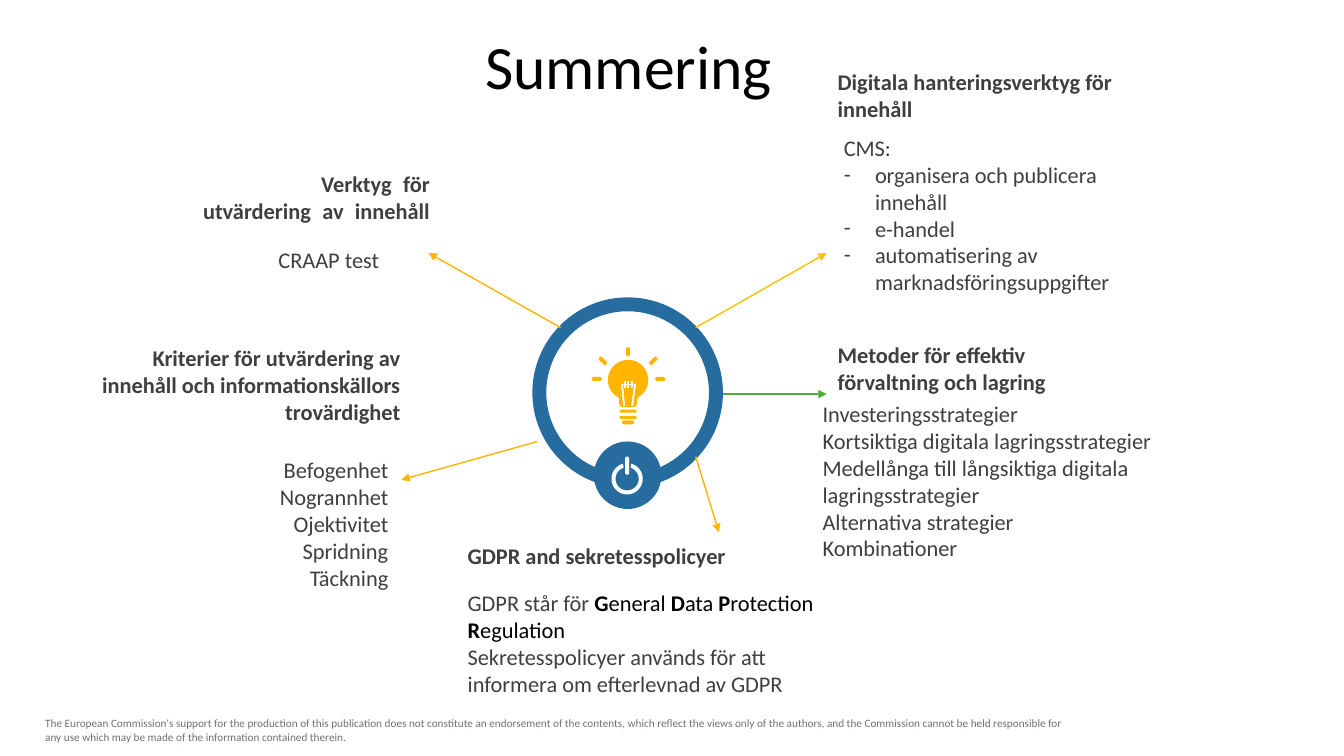
from math import cos, radians, sin

from pptx import Presentation
from pptx.dml.color import RGBColor
from pptx.enum.shapes import MSO_CONNECTOR, MSO_SHAPE
from pptx.enum.text import MSO_ANCHOR, PP_ALIGN
from pptx.oxml.ns import qn
from pptx.util import Inches, Pt
from lxml import etree

LEFT, RIGHT, MID = PP_ALIGN.LEFT, PP_ALIGN.RIGHT, PP_ALIGN.CENTER
OVAL, DONUT = MSO_SHAPE.OVAL, MSO_SHAPE.DONUT
COLORS = {"ring": "266C9F", "bulb": "FFB500", "gold": "FFC000", "green": "4EAE3A",
          "text": "3F3F3F", "black": "000000", "white": "FFFFFF", "note": "757070"}

prs = Presentation()
prs.slide_width, prs.slide_height = Inches(13.33), Inches(7.5)
slide = prs.slides.add_slide(prs.slide_layouts[5])


def rgb(name):
    return RGBColor.from_string(COLORS[name])


def write(box, paras, size=16, align=LEFT, color="text", anchor=MSO_ANCHOR.MIDDLE):
    """Fill a box with paragraphs; each is a list of (text, bold, color) runs,
    and a first item of "-" makes it a dashed list item."""
    frame = box.text_frame
    frame.word_wrap, frame.vertical_anchor = True, anchor
    for i, runs in enumerate(paras):
        para = frame.paragraphs[0] if i == 0 else frame.add_paragraph()
        if runs[0] == "-":
            runs = runs[1:]
            ppr = para._p.get_or_add_pPr()
            ppr.set("marL", str(Inches(0.31)))
            ppr.set("indent", str(-Inches(0.31)))
            etree.SubElement(ppr, qn("a:buFont")).set("typeface", "Calibri")
            etree.SubElement(ppr, qn("a:buChar")).set("char", "-")
        para.alignment = align
        for text, bold, *tint in runs:
            if text == "\n":
                para.add_line_break()
                continue
            run = para.add_run()
            run.text = text
            font = run.font
            font.name, font.size, font.bold = "Calibri", Pt(size), bold
            font.color.rgb = rgb(tint[0] if tint else color)
            if text == " ":
                run._r.get_or_add_rPr().set("spc", "450")


# Title and footer
title = slide.shapes.title
title.left, title.top = Inches(2.87), Inches(0.29)
title.width, title.height = Inches(6.73), Inches(0.79)
write(title, [[("Summering", False)]], 44, MID, "black")
title.text_frame.paragraphs[0].line_spacing = 0.9

foot = slide.shapes.add_textbox(Inches(0.35), Inches(7.06), Inches(10.46), Inches(0.37))
write(foot, [[("The European Commission's support for the production of this publication "
               "does not constitute an endorsement of the contents, which reflect the views "
               "only of the authors, and the Commission cannot be held responsible for any "
               "use which may be made of the information contained therein.", False)]],
      8, color="note", anchor=MSO_ANCHOR.TOP)

# Outlines of the bulb (glass, then filament) and of the power sign
glass = [(6.23 + 0.2 * cos(radians(a)), 3.77 + 0.2 * sin(radians(a)))
         for a in range(135, 406, 5)]
glass += [(6.32, 3.95), (6.32, 4), (6.31, 4.03), (6.28, 4.04),
          (6.18, 4.04), (6.15, 4.03), (6.14, 4), (6.14, 3.95)]
wire = [(6.16, 3.81), (6.18, 4.03), (6.2, 4.03), (6.18, 3.82)]
for x in (6.19, 6.22, 6.26):
    wire += [(x, 3.82), (x, 3.85), (x + 0.02, 3.85), (x + 0.02, 3.82)]
wire += [(6.29, 3.82), (6.26, 4.03), (6.28, 4.03), (6.31, 3.81)]
for x in (6.26, 6.22, 6.19):
    wire += [(x + 0.02, 3.81), (x + 0.02, 3.78), (x, 3.78), (x, 3.81)]
loop = [(6.22 + r * cos(radians(a)), 4.75 + r * sin(radians(a)))
        for r, turns in ((0.155, range(-75, 256, 5)), (0.115, range(252, -73, -4)))
        for a in turns]
signs = {"bulb": [glass, wire], "white": [loop]}

# Round-ended bars: sign, centre, length, thickness, turn
bars = [
    ("bulb", 5.92, 3.76, 0.1, 0.04, 0), ("bulb", 5.98, 3.58, 0.1, 0.04, 45),
    ("bulb", 6.23, 3.49, 0.09, 0.04, 90), ("bulb", 6.48, 3.58, 0.1, 0.04, -45),
    ("bulb", 6.55, 3.76, 0.1, 0.04, 0), ("bulb", 6.23, 4.08, 0.17, 0.03, 0),
    ("bulb", 6.23, 4.14, 0.17, 0.03, 0), ("bulb", 6.23, 4.19, 0.12, 0.04, 0),
    ("white", 6.22, 4.62, 0.18, 0.04, 90),
]
for sign, x, y, long, thick, turn in bars:
    bar = []
    for end in (0, 180):
        mid = radians(turn + end)
        for a in range(-90, 91, 15):
            tip = mid + radians(a)
            bar.append((x + (long - thick) / 2 * cos(mid) + thick / 2 * cos(tip),
                        y + (long - thick) / 2 * sin(mid) + thick / 2 * sin(tip)))
    signs[sign].append(bar)

parts = []
for kind, box in ((DONUT, (5.28, 2.95, 1.89, 1.89)), (OVAL, (5.89, 4.38, 0.67, 0.67))):
    parts.append((slide.shapes.add_shape(kind, *map(Inches, box)), "ring"))
parts[0][0].adjustments[0] = 0.073
for sign, rings in signs.items():
    rings = [[(Inches(x), Inches(y)) for x, y in ring] for ring in rings]
    form = slide.shapes.build_freeform(*rings[0][0])
    for i, ring in enumerate(rings):
        if i:
            form.move_to(*ring[0])
        form.add_line_segments(ring[1:], close=True)
    parts.append((form.convert_to_shape(), sign))
for part, fill in parts:
    part.shadow.inherit = False
    part.fill.solid()
    part.fill.fore_color.rgb = rgb(fill)
    part.line.fill.background()

# Arrows: start, end, color
arrows = [
    ((7.17, 3.91), (8.2, 3.91), "green"),
    ((5.56, 3.25), (4.25, 2.51), "bulb"),
    ((6.9, 3.25), (8.2, 2.51), "gold"),
    ((6.9, 4.53), (7.13, 5.28), "bulb"),
    ((5.33, 4.38), (3.98, 4.76), "bulb"),
]
for start, end, color in arrows:
    arrow = slide.shapes.add_connector(MSO_CONNECTOR.STRAIGHT, *map(Inches, start + end))
    arrow.line.color.rgb = rgb(color)
    arrow.line.width = Pt(1)
    etree.SubElement(arrow.line._get_or_add_ln(), qn("a:tailEnd")).set("type", "triangle")
    etree.SubElement(arrow._element.spPr, qn("a:effectLst"))

# Topic headings and details: box, alignment, paragraphs
topics = [
    ((1.77, 1.63, 2.59, 0.65), RIGHT,
     [[("Verktyg", True), (" ", True), ("för", True), ("\n", True), ("utvärdering", True),
       (" ", True), ("av", True), (" ", True), ("innehåll", True)]]),
    ((2.5, 2.39, 1.36, 0.37), RIGHT, [[("CRAAP test", False)]]),
    ((0.84, 3.36, 3.23, 0.91), RIGHT,
     [[("Kriterier för utvärdering av innehåll och informationskällors trovärdighet", True)]]),
    ((0.74, 4.47, 3.21, 1.45), RIGHT,
     [[(word, False)] for word in
      ("Befogenhet", "Nogrannhet", "Ojektivitet", "Spridning", "Täckning")]),
    ((8.21, 0.62, 3.06, 0.64), LEFT, [[("Digitala hanteringsverktyg för innehåll", True)]]),
    ((8.27, 1.27, 3.38, 1.72), LEFT,
     [[("CMS:", False)],
      ["-", ("organisera och publicera innehåll", False)],
      ["-", ("e-handel", False)],
      ["-", ("automatisering av marknadsföringsuppgifter", False)]]),
    ((8.21, 3.33, 2.91, 0.64), LEFT,
     [[("Metoder för effektiv förvaltning och lagring", True)]]),
    ((8.06, 3.91, 4.92, 1.72), LEFT,
     [[(word, False)] for word in
      ("Investeringsstrategier", "Kortsiktiga digitala lagringsstrategier",
       "Medellånga till långsiktiga digitala", "lagringsstrategier",
       "Alternativa strategier", "Kombinationer")]),
    ((4.54, 5.33, 3.02, 0.37), LEFT, [[("GDPR and sekretesspolicyer", True)]]),
    ((4.54, 5.79, 4.04, 1.18), LEFT,
     [[("GDPR står för ", False),
       ("G", True, "black"), ("eneral", False, "black"),
       (" D", True, "black"), ("ata", False, "black"),
       (" P", True, "black"), ("rotection", False, "black"),
       (" R", True, "black"), ("egulation", False, "black")],
      [("Sekretesspolicyer används för att informera om efterlevnad av GDPR", False)]]),
]
for box, align, paras in topics:
    write(slide.shapes.add_textbox(*map(Inches, box)), paras, align=align)

prs.save("out.pptx")
